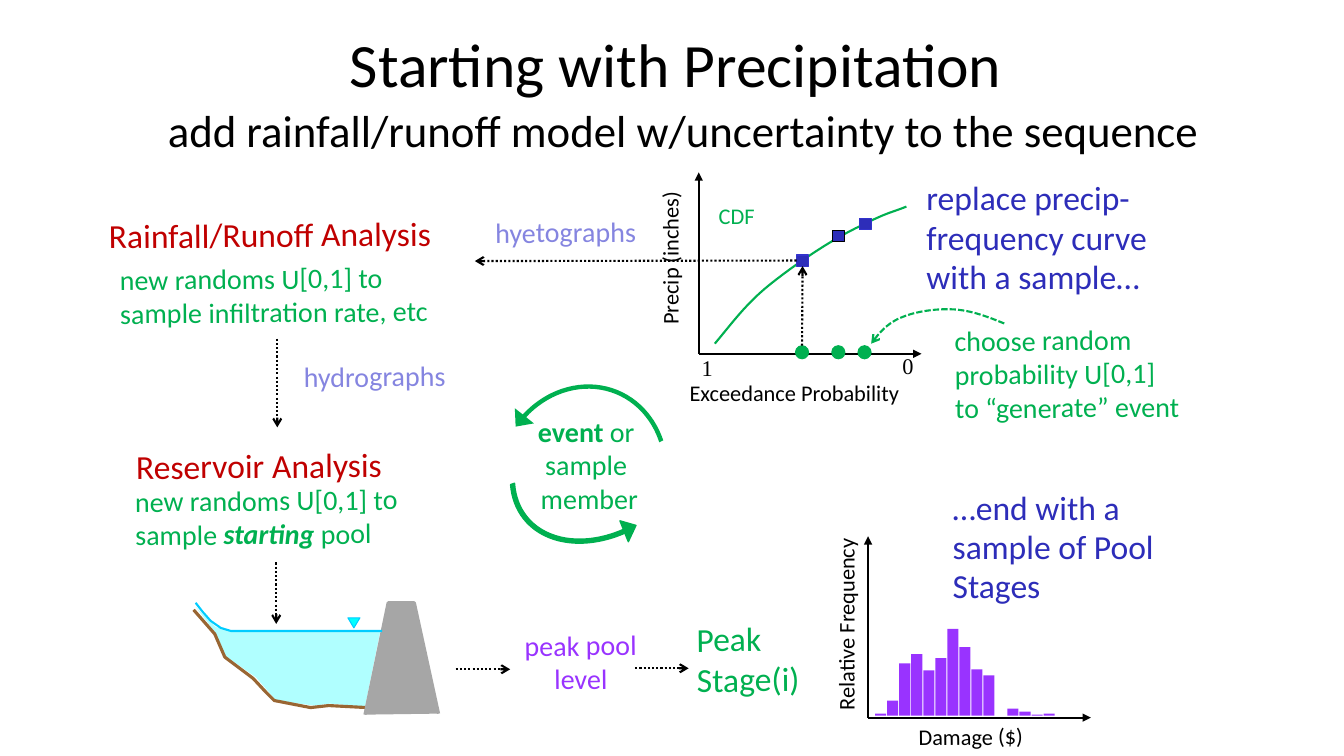
from lxml import etree
from pptx import Presentation
from pptx.dml.color import RGBColor
from pptx.enum.dml import MSO_LINE
from pptx.enum.shapes import MSO_CONNECTOR, MSO_SHAPE
from pptx.enum.text import MSO_ANCHOR, MSO_AUTO_SIZE, PP_ALIGN
from pptx.oxml.ns import qn
from pptx.util import Cm, Pt

COLORS = {
    "black": "000000", "green": "00B050", "red": "C00000", "navy": "2D2DB9",
    "blue": "3333CC", "lavender": "8585E0", "purple": "9933FF", "grey": "A6A6A6",
    "brown": "996633", "aqua": "00FFFF", "sky": "00CCFF",
}
TILT = 359.5
SNUG = (0.11, 0.06)
ROOMY = (0.14, 0.07)


def inches(value):
    """Length for a position measured in inches on the slide."""
    return Cm(value * 2.54)


def color(name):
    return RGBColor.from_string(COLORS[name])


def style_line(shape, name, width, dash=None, arrow=None):
    shape.line.color.rgb = color(name)
    shape.line.width = Pt(width)
    if dash:
        shape.line.dash_style = dash
    if arrow:
        outline = shape._element.spPr.find(qn("a:ln"))
        etree.SubElement(outline, qn("a:tailEnd"), type=arrow)


def style_fill(shape, name, alpha=None):
    if name is None:
        shape.fill.background()
        return
    shape.fill.solid()
    shape.fill.fore_color.rgb = color(name)
    if alpha:
        tint = shape._element.spPr.find(qn("a:solidFill"))[0]
        etree.SubElement(tint, qn("a:alpha"), val=str(alpha * 1000))


def add_text(slide, content, box, size=20, tint="black", font="Calibri", align=None,
             margins=SNUG, rotation=0, wrap=True, spacing=None, title=False):
    """Content is a string or a list of paragraphs; a paragraph is a string
    or a list of (text, style) runs, with b and i as style letters."""
    label = slide.shapes.add_textbox(*map(inches, box))
    label.rotation = rotation
    frame = label.text_frame
    frame.word_wrap = wrap
    frame.auto_size = MSO_AUTO_SIZE.NONE if title else MSO_AUTO_SIZE.SHAPE_TO_FIT_TEXT
    frame.vertical_anchor = MSO_ANCHOR.MIDDLE if title else MSO_ANCHOR.TOP
    frame.margin_left = frame.margin_right = inches(margins[0])
    frame.margin_top = frame.margin_bottom = inches(margins[1])
    lines = [content] if isinstance(content, str) else content
    for number, line in enumerate(lines):
        paragraph = frame.add_paragraph() if number else frame.paragraphs[0]
        paragraph.alignment = align
        if spacing:
            paragraph.line_spacing = Pt(spacing)
        for words, style in [(line, "")] if isinstance(line, str) else line:
            run = paragraph.add_run()
            run.text = words
            run.font.size = Pt(size)
            run.font.name = font
            run.font.bold = "b" in style
            run.font.italic = "i" in style
            run.font.color.rgb = color(tint)


def add_arrow(slide, start, end, width=1.5, dash=MSO_LINE.ROUND_DOT, head="arrow"):
    arrow = slide.shapes.add_connector(
        MSO_CONNECTOR.STRAIGHT, *map(inches, (*start, *end)))
    style_line(arrow, "black", width, dash, head)
    etree.SubElement(arrow._element.spPr, qn("a:effectLst"))
    return arrow


def add_axes(slide, x, y):
    for end in ((x, y - 1.8), (x + 2.21, y)):
        add_arrow(slide, (x, y), end, 1.25, None, "triangle")


def add_preset(slide, kind, box, fill, line=None, width=0.75, rotation=0, flip=False):
    shape = slide.shapes.add_shape(kind, *map(inches, box))
    shape.shadow.inherit = False
    shape.rotation = rotation
    style_fill(shape, fill)
    if line:
        style_line(shape, line, width)
    else:
        shape.line.fill.background()
    if flip:
        shape._element.spPr.find(qn("a:xfrm")).set("flipV", "1")
    return shape


def add_outline(slide, points, fill=None, alpha=None, line=None, width=1.5,
                dash=None, arrow=None, close=False):
    corners = [(inches(x), inches(y)) for x, y in points]
    builder = slide.shapes.build_freeform(*corners[0])
    builder.add_line_segments(corners[1:], close=close)
    shape = builder.convert_to_shape()
    shape.shadow.inherit = False
    style_fill(shape, fill, alpha)
    if line:
        style_line(shape, line, width, dash, arrow)
    else:
        shape.line.fill.background()


def curve(points, steps=12):
    """Points along joined cubic Bezier arcs: a start, then three per arc."""
    track = [points[0]]
    for first in range(0, len(points) - 1, 3):
        arc = points[first:first + 4]
        for step in range(1, steps + 1):
            t = step / steps
            weights = ((1 - t) ** 3, 3 * t * (1 - t) ** 2, 3 * t * t * (1 - t), t ** 3)
            track.append(tuple(sum(w * p[axis] for w, p in zip(weights, arc))
                               for axis in (0, 1)))
    return track


def draw_precipitation_curve(slide):
    add_outline(slide, curve([
        (7.09, 3.41), (7.25, 3.22), (7.4, 3.01), (7.64, 2.82), (7.89, 2.62),
        (8.27, 2.36), (8.56, 2.23), (8.79, 2.11), (8.87, 2.1), (8.99, 2.05)]), line="green")
    add_axes(slide, 6.93, 3.51)
    add_text(slide, "Precip (inches)", (5.86, 2.36, 1.56, 0.38), 16, rotation=270, wrap=False)
    add_text(slide, "Exceedance Probability", (6.7, 3.69, 2.46, 0.41), 16,
             margins=ROOMY, wrap=False)
    for bound, x, y in (("1", 6.82, 3.44), ("0", 8.81, 3.42)):
        add_text(slide, bound, (x, y, 0.4, 0.41), 16, font="Times New Roman",
                 margins=ROOMY, wrap=False)
    add_text(slide, "CDF", (7.03, 1.96, 0.68, 0.37), 16, "green", margins=(0.1, 0.05))

    samples = []
    for x, y, edge in ((7.89, 2.53, "blue"), (8.25, 2.29, "black"), (8.51, 2.17, "blue")):
        probability = add_preset(slide, MSO_SHAPE.OVAL, (x, 3.43, 0.13, 0.13), "green", "green")
        depth = add_preset(slide, MSO_SHAPE.RECTANGLE, (x + 0.01, y, 0.12, 0.11), "navy", edge)
        samples.append((probability, depth))
    probability, depth = samples[0]
    lookup = add_arrow(slide, (7.95, 3.43), (7.95, 2.64))
    lookup.begin_connect(probability, 0)
    lookup.end_connect(depth, 2)
    hyetograph = add_arrow(slide, (7.9, 2.59), (4.71, 2.59))
    hyetograph.begin_connect(depth, 1)
    add_outline(slide, curve([
        (9.96, 3.21), (9.79, 3.14), (9.63, 3.08), (9.46, 3.07), (9.29, 3.06),
        (9.08, 3.09), (8.94, 3.15), (8.81, 3.2), (8.72, 3.3), (8.64, 3.41)]),
        line="green", dash=MSO_LINE.SQUARE_DOT, arrow="arrow")


def draw_reservoir(slide):
    add_outline(slide, [
        (1.94, 6.02), (2.14, 6.22), (2.3, 6.27), (3.77, 6.27), (3.62, 7.01), (3.27, 6.98),
        (3.12, 7), (2.74, 6.95), (2.54, 6.72), (2.24, 6.51), (2.14, 6.28)],
        fill="aqua", alpha=31, close=True)
    add_outline(slide, [
        (1.92, 6.05), (2.13, 6.29), (2.23, 6.52), (2.51, 6.73), (2.64, 6.87),
        (2.72, 6.95), (3.08, 7.02), (3.26, 7), (3.64, 7.02)], line="brown", width=2.25)
    add_outline(slide, [(3.62, 7.09), (3.85, 5.98), (4.11, 5.98), (4.35, 7.08)],
                fill="grey", line="grey", width=2.25)
    add_outline(slide, [(1.94, 5.98), (2.01, 6.07), (2.09, 6.16), (2.19, 6.23),
                        (2.29, 6.26), (3.79, 6.26)], line="sky")
    add_preset(slide, MSO_SHAPE.ISOSCELES_TRIANGLE, (3.45, 6.13, 0.12, 0.1),
               "aqua", "sky", flip=True)


def draw_damage_histogram(slide):
    add_axes(slide, 8.61, 7.12)
    heights = (0.02, 0.15, 0.52, 0.61, 0.45, 0.57, 0.86, 0.68, 0.46, 0.4,
               0, 0.07, 0.04, 0.01, 0.02)
    for number, height in enumerate(heights):
        if height:
            add_preset(slide, MSO_SHAPE.RECTANGLE,
                       (8.68 + number * 1.67 / 14, 7.1 - height, 0.11, height), "purple")
    add_text(slide, "Damage ($)", (9, 7.11, 1.27, 0.38), 16, rotation=TILT, wrap=False)
    add_text(slide, "Relative Frequency", (7.41, 5.99, 1.95, 0.38), 16,
             rotation=270, wrap=False)


def draw_event_loop(slide):
    for box, rotation, start, line in (((4.82, 3.7, 1.89, 2.1), 202.1, 136.305, None),
                                       ((5.15, 3.35, 1.74, 2.29), 51.8, 149.947, "green")):
        loop = add_preset(slide, MSO_SHAPE.CIRCULAR_ARROW, box, "green", line, 1, rotation, True)
        for number, value in enumerate((0.023, 5.666, 200.515, start, 0.064)):
            loop.adjustments[number] = value
    add_text(slide, [[("event", "b"), (" or ", "")], "sample ", "member"],
             (4.65, 4.05, 2.39, 1.12), tint="green", align=PP_ALIGN.CENTER)


def main():
    deck = Presentation()
    deck.slide_width, deck.slide_height = inches(13.33), inches(7.5)
    slide = deck.slides.add_slide(deck.slide_layouts[6])

    for heading, box, size in (
            ("Starting with Precipitation", (1.85, 0, 9.71, 1.25), 44),
            ("add rainfall/runoff model w/uncertainty to the sequence",
             (1.16, 0.96, 11.24, 0.66), 32)):
        add_text(slide, heading, box, size, align=PP_ALIGN.CENTER, margins=(0.1, 0.05), title=True)

    draw_precipitation_curve(slide)
    draw_reservoir(slide)
    draw_damage_histogram(slide)
    draw_event_loop(slide)

    for remark, box in (
            ("replace precip-frequency curve with a sample…", (9.09, 1.72, 2.92, 1.28)),
            ("…end with a sample of Pool Stages", (9.35, 4.79, 2.43, 1.28))):
        add_text(slide, remark, box, 24, "navy", margins=(0.1, 0.05), spacing=28)
    for step, box, tint in (
            ("Rainfall/Runoff Analysis", (0.97, 2.06, 3.8, 0.52), "red"),
            ("Reservoir Analysis", (1.24, 4.35, 3.6, 0.52), "red"),
            ("Peak Stage(i)", (6.8, 6.07, 1.46, 0.92), "green")):
        add_text(slide, step, box, 24, tint, rotation=TILT)
    for detail, box in (
            ("new randoms U[0,1] to sample infiltration rate, etc", (1.08, 2.53, 3.52, 0.79)),
            ([[("new randoms U[0,1] to sample ", ""), ("starting", "bi"), (" pool", "")]],
             (1.23, 4.73, 3.2, 0.79)),
            (["choose random probability U[0,1]", "to “generate” event"],
             (9.36, 3.14, 2.75, 1.12))):
        add_text(slide, detail, box, tint="green", rotation=TILT)
    for flow, box, tint in (
            ("hyetographs", (4.71, 2.07, 1.8, 0.45), "lavender"),
            ("hydrographs", (2.79, 3.5, 1.85, 0.45), "lavender"),
            ("peak pool level", (5, 6.17, 1.52, 0.79), "purple")):
        add_text(slide, flow, box, tint=tint, align=PP_ALIGN.CENTER, rotation=TILT)
    for start, end in (((2.75, 3.36), (2.75, 4.24)), ((2.74, 5.58), (2.74, 6.19)),
                       ((4.52, 6.64), (5.06, 6.64)), ((6.3, 6.63), (6.83, 6.63))):
        add_arrow(slide, start, end)

    deck.save("out.pptx")


if __name__ == "__main__":
    main()
